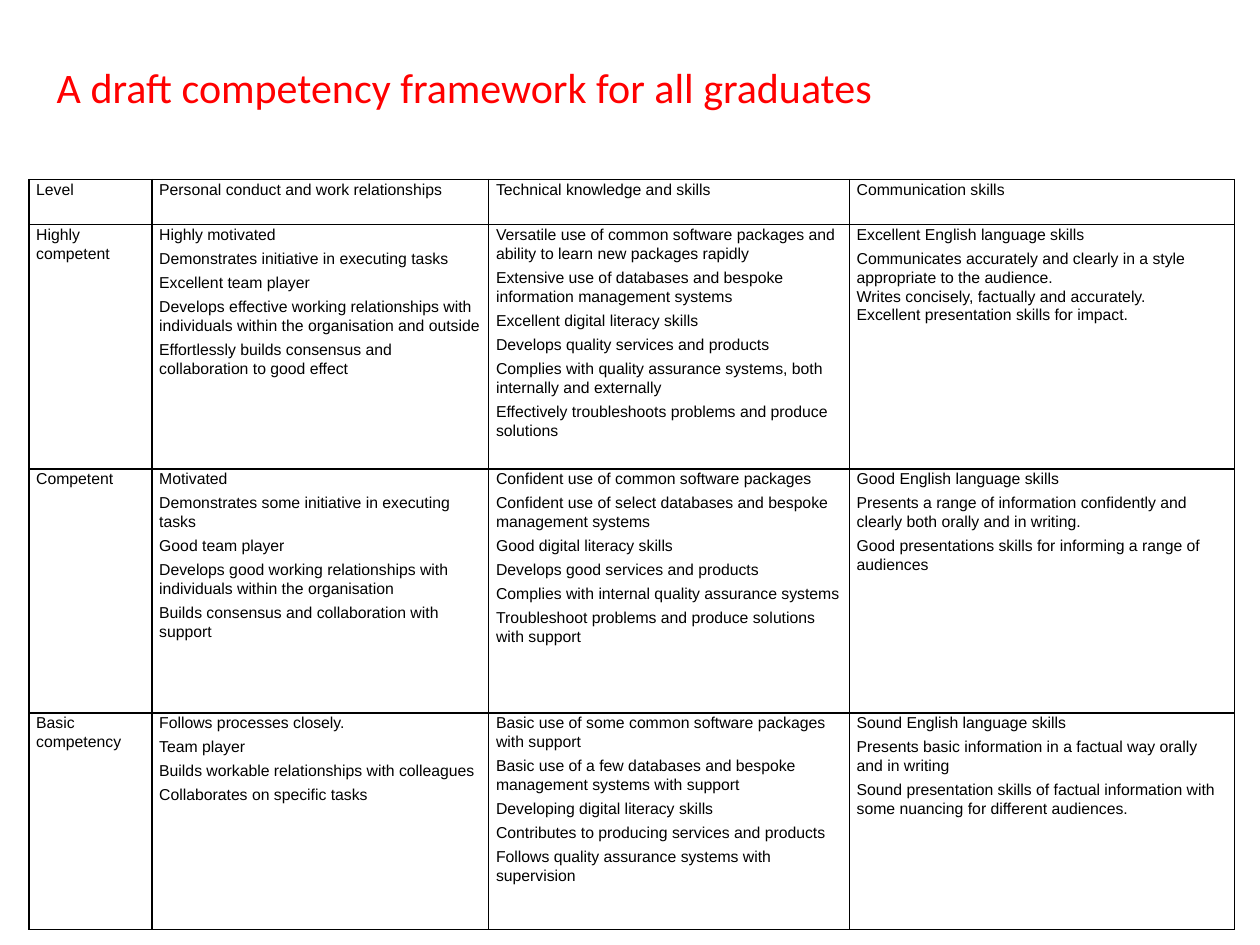
from lxml import etree
from pptx import Presentation
from pptx.dml.color import RGBColor
from pptx.enum.text import MSO_ANCHOR, PP_ALIGN
from pptx.oxml.ns import qn
from pptx.util import Cm, Pt

LEFT = PP_ALIGN.LEFT
MIDDLE = MSO_ANCHOR.MIDDLE
BLACK = "000000"
RED = "FF0000"
TITLE_ONLY = 5

COL_WIDTHS = [2.48, 6.79, 7.27, 7.77]
ROW_HEIGHTS = [0.91, 4.92, 4.92, 4.37]

# One list per row, one list of paragraphs per cell
ROWS = [
    [
        ["Level"],
        ["Personal conduct and work relationships"],
        ["Technical knowledge and skills"],
        ["Communication skills"],
    ],
    [
        ["Highly competent"],
        ["Highly motivated",
         "Demonstrates initiative in executing tasks",
         "Excellent team player",
         "Develops effective working relationships with individuals within the organisation and outside",
         "Effortlessly builds consensus and collaboration to good effect"],
        ["Versatile use of common software packages and ability to learn new packages rapidly",
         "Extensive use of databases and bespoke information management systems",
         "Excellent digital literacy skills",
         "Develops quality services and products",
         "Complies with quality assurance systems, both internally and externally",
         "Effectively troubleshoots problems and produce solutions"],
        ["Excellent English language skills",
         "Communicates accurately and clearly in a style appropriate to the audience.\n"
         "Writes concisely, factually and accurately.\n"
         "Excellent presentation skills for impact."],
    ],
    [
        ["Competent"],
        ["Motivated",
         "Demonstrates some initiative in executing tasks",
         "Good team player",
         "Develops good working relationships with individuals within the organisation",
         "Builds consensus and collaboration with support"],
        ["Confident use of common software packages",
         "Confident use of select databases and bespoke management systems",
         "Good digital literacy skills",
         "Develops good services and products",
         "Complies with internal quality assurance systems",
         "Troubleshoot problems and produce solutions with support"],
        ["Good English language skills",
         "Presents a range of information confidently and clearly both orally and in writing.",
         "Good presentations skills for informing a range of audiences"],
    ],
    [
        ["Basic", "competency"],
        ["Follows processes closely.",
         "Team player",
         "Builds workable relationships with colleagues",
         "Collaborates on specific tasks"],
        ["Basic use of some common software packages with support",
         "Basic use of a few databases and bespoke management systems with support",
         "Developing digital literacy skills",
         "Contributes to producing services and products",
         "Follows quality assurance systems with supervision"],
        ["Sound English language skills",
         "Presents basic information in a factual way orally and in writing",
         "Sound presentation skills of factual information with some nuancing for different audiences."],
    ],
]


def set_font(p, name, size, color):
    p.font.name = name
    p.font.size = Pt(size)
    p.font.color.rgb = RGBColor.from_string(color)


def add_borders(cell, color, width):
    """Draw all four sides; call before setting the cell's fill."""
    tc_pr = cell._tc.get_or_add_tcPr()
    for side in ("lnL", "lnR", "lnT", "lnB"):
        ln = etree.SubElement(tc_pr, qn(f"a:{side}"), w=str(Pt(width)))
        fill = etree.SubElement(ln, qn("a:solidFill"))
        etree.SubElement(fill, qn("a:srgbClr"), val=color)


prs = Presentation()
prs.slide_width = Cm(25.4)
prs.slide_height = Cm(19.05)
s = prs.slides.add_slide(prs.slide_layouts[TITLE_ONLY])

# Title
title = s.shapes.title
title.left, title.top, title.width, title.height = Cm(0.89), Cm(1.12), Cm(19), Cm(1.27)
tf = title.text_frame
tf.word_wrap = True
tf.vertical_anchor = MIDDLE
p = tf.paragraphs[0]
p.text = "A draft competency framework for all graduates"
p.alignment = LEFT
set_font(p, "Calibri", 24, RED)

# Competency table
table = s.shapes.add_table(len(ROWS), len(COL_WIDTHS), Cm(0.58), Cm(3.62),
                           Cm(sum(COL_WIDTHS)), Cm(sum(ROW_HEIGHTS))).table
table.first_row = False
table.horz_banding = False
for column, width in zip(table.columns, COL_WIDTHS):
    column.width = Cm(width)
for row, height in zip(table.rows, ROW_HEIGHTS):
    row.height = Cm(height)

for i, row in enumerate(ROWS):
    for j, paragraphs in enumerate(row):
        cell = table.cell(i, j)
        cell.margin_left = cell.margin_right = Cm(0.15)
        cell.margin_top = cell.margin_bottom = Cm(0)
        add_borders(cell, BLACK, 1)
        cell.fill.background()
        tf = cell.text_frame
        for k, text in enumerate(paragraphs):
            p = tf.add_paragraph() if k else tf.paragraphs[0]
            p.text = text
            p.line_spacing = 1.07
            if i and j:
                p.space_after = Pt(3)
            set_font(p, "Arial", 9, BLACK)

prs.save("out.pptx")
